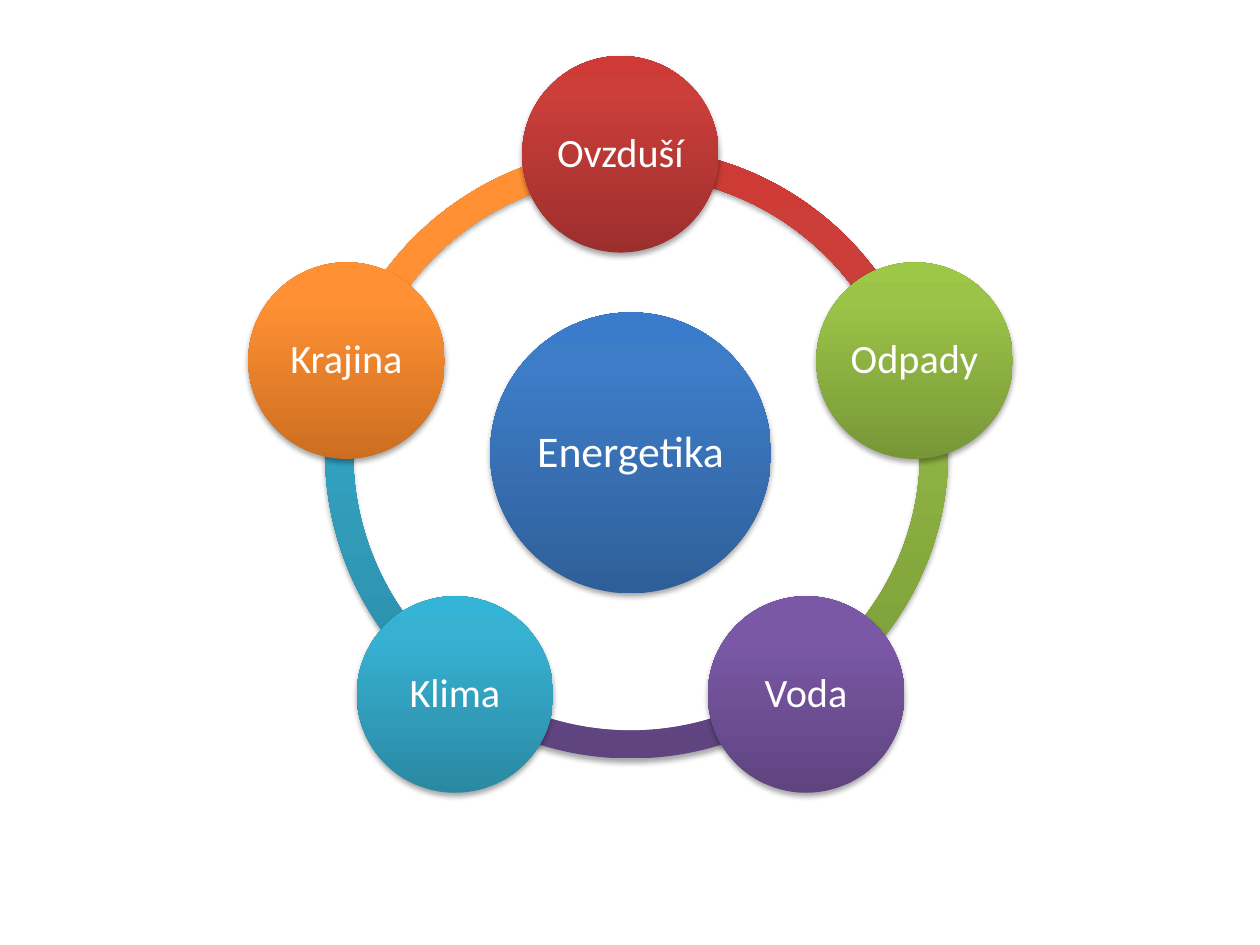
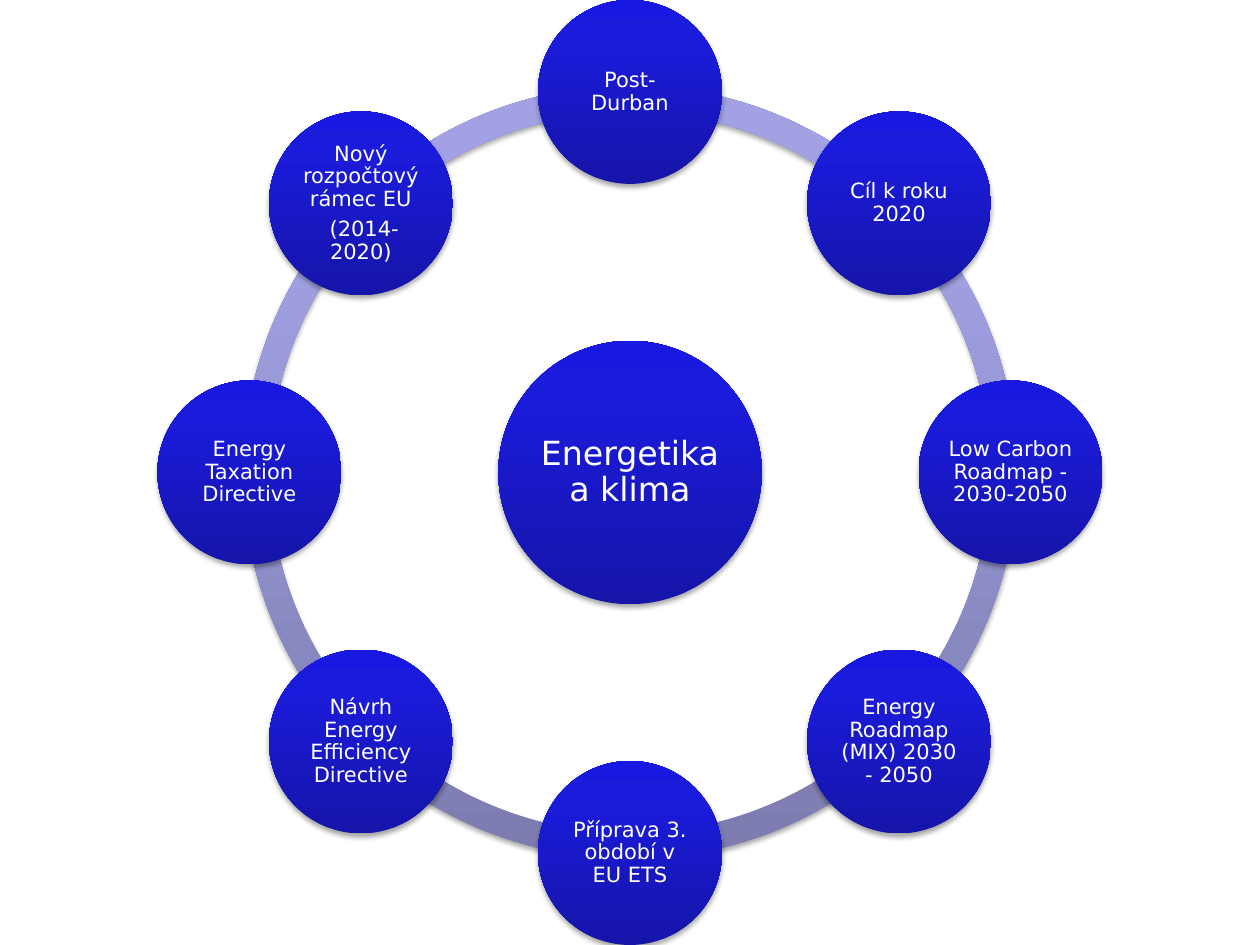
import copy
import math

import pptx
import pptx.dml.color
import pptx.enum.shapes
import pptx.enum.text
import pptx.oxml.ns
import pptx.util
from lxml import etree

Inches = pptx.util.Inches
Pt = pptx.util.Pt
SHAPE = pptx.enum.shapes.MSO_SHAPE
qn = pptx.oxml.ns.qn

# Gradient stops from the dark bottom edge to the light top edge
STOPS = (0, 0.8, 1)
BLUE = ("2F5F99", "3D7CC7", "3A7CCB")
RED = ("9C2F2D", "CB3E3A", "CE3B37")
GREEN = ("779737", "9BC348", "9DC746")
PURPLE = ("5F4480", "7B58A6", "7C57A8")
TEAL = ("2A88A2", "37B1D2", "34B4D6")
ORANGE = ("CC6E20", "FF9034", "FF9136")
NAVY = ("1515A9", "1B1BDC", "1818E1")
LILAC = ("7C7CAF", "A1A1E3", "A0A0E5")
WHITE = "FFFFFF"


def color(code):
    return pptx.dml.color.RGBColor.from_string(code)


def shade(shape, tones):
    """Fill upwards with three tones, without an outline."""
    shape.fill.gradient()
    shape.fill.gradient_angle = 90
    stops = shape._element.spPr.find(".//" + qn("a:gsLst"))
    stops.append(copy.deepcopy(stops[0]))
    for stop, place, tone in zip(shape.fill.gradient_stops, STOPS, tones):
        stop.position = place
        stop.color.rgb = color(tone)
    shape.line.fill.background()


def shadow(shape):
    shape.shadow.inherit = False
    effects = shape._element.spPr.find(qn("a:effectLst"))
    outer = etree.SubElement(
        effects, qn("a:outerShdw"), blurRad=str(Pt(3.1)), dist=str(Pt(1.8)),
        dir="5400000", rotWithShape="0")
    tint = etree.SubElement(outer, qn("a:srgbClr"), val="000000")
    etree.SubElement(tint, qn("a:alpha"), val="35000")


def draw(slide, kind, mid, wide, high, tones):
    """Add a shaded preset shape centred on mid."""
    x, y = mid
    shape = slide.shapes.add_shape(
        kind, Inches(x - wide / 2), Inches(y - high / 2), Inches(wide), Inches(high))
    shade(shape, tones)
    shadow(shape)
    return shape


def write(shape, text, font="Calibri", size=12, ink=WHITE, inset=0.03):
    frame = shape.text_frame
    frame.word_wrap = True
    frame.vertical_anchor = pptx.enum.text.MSO_ANCHOR.MIDDLE
    frame.margin_left = frame.margin_right = Inches(inset)
    frame.margin_top = frame.margin_bottom = Inches(inset)
    frame.text = text
    for para in frame.paragraphs:
        para.alignment = pptx.enum.text.PP_ALIGN.CENTER
        para.line_spacing = 0.9
        para.space_after = Pt(0.35 * size)
        para.font.name = font
        para.font.size = Pt(size)
        para.font.color.rgb = color(ink)


def disc(slide, mid, wide, tones, text, **style):
    write(draw(slide, SHAPE.OVAL, mid, wide, wide, tones), text, **style)


def wheel(slide, box, hub, nodes, radius, disc_wide, thick, font, size, inset):
    """Draw a hub inside a ring of discs; box is left, top and side of the ring.

    hub is text, width, point size and tones; a node is text, disc tones,
    arc tones, sideways shift and extra arc width.
    """
    left, top, side = box
    mid = (left + side / 2, top + side / 2)
    spots, turns = [], []
    for i, (_, _, _, shift, _) in enumerate(nodes):
        turn = math.radians(360 * i / len(nodes) - 90)
        dx = radius * math.cos(turn) + shift
        dy = radius * math.sin(turn)
        spots.append((mid[0] + dx, mid[1] + dy))
        turns.append(round(math.degrees(math.atan2(dy, dx)), 2) % 360)

    for i in reversed(range(len(nodes))):
        _, _, tones, _, extra = nodes[i]
        arc = draw(slide, SHAPE.BLOCK_ARC, mid, side + extra, side, tones)
        # Angles are stored as 60000ths of a degree, adjustments as 100000ths
        arc.adjustments[0] = turns[i] * 0.6
        arc.adjustments[1] = turns[(i + 1) % len(nodes)] * 0.6
        arc.adjustments[2] = thick

    text, hub_wide, hub_size, tones = hub
    disc(slide, mid, hub_wide, tones, text, font=font, size=hub_size)
    for spot, (text, tones, _, _, _) in zip(spots, nodes):
        disc(slide, spot, disc_wide, tones, text, font=font, size=size, inset=inset)


def themes(slide):
    nodes = [
        ("Ovzduší", RED, RED, -0.08, 0),
        ("Odpady", GREEN, GREEN, 0, 0.19),
        ("Voda", PURPLE, PURPLE, 0, 0),
        ("Klima", TEAL, TEAL, 0, 0),
        ("Krajina", ORANGE, ORANGE, 0, 0),
    ]
    wheel(slide, (2.58, 1.17, 4.85), ("Energetika", 2.23, 25, BLUE), nodes,
          radius=2.37, disc_wide=1.56, thick=0.046, font="Calibri", size=23, inset=0.03)


def policy(slide):
    texts = [
        "Post-Durban",
        "Cíl k roku 2020",
        "Low Carbon Roadmap - 2030-2050",
        "Energy Roadmap (MIX) 2030 - 2050",
        "Příprava 3. období v EU ETS",
        "Návrh Energy Efficiency Directive",
        "Energy Taxation Directive",
        "Nový rozpočtový rámec EU\n (2014-2020)",
    ]
    nodes = [(text, NAVY, LILAC, 0, 0) for text in texts]
    wheel(slide, (1.93, 0.68, 6.14), ("Energetika a klima", 2.09, 19, NAVY), nodes,
          radius=3.02, disc_wide=1.46, thick=0.034, font="DejaVu Sans", size=12, inset=0.02)


def main():
    deck = pptx.Presentation()
    deck.slide_width = Inches(10)
    deck.slide_height = Inches(7.5)
    for fill in (themes, policy):
        fill(deck.slides.add_slide(deck.slide_layouts[6]))
    deck.save("out.pptx")


if __name__ == "__main__":
    main()
